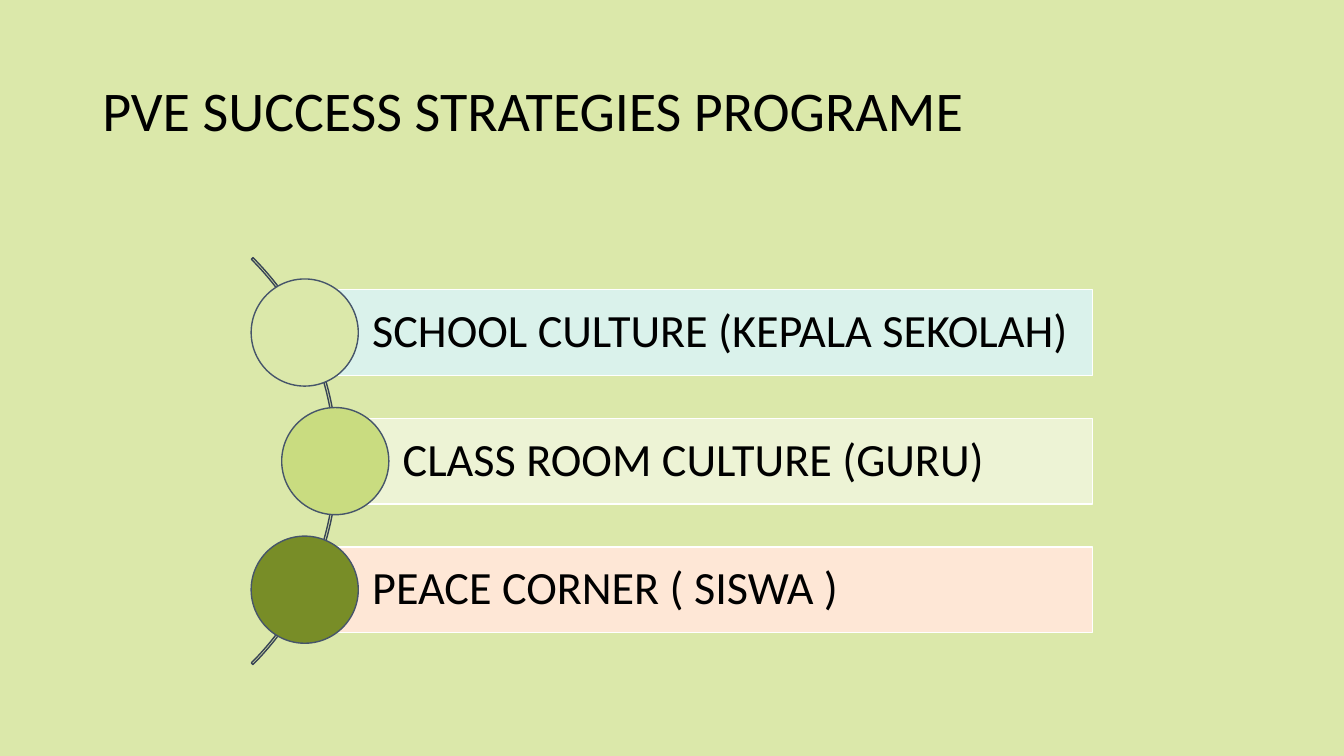
from pptx import Presentation
from pptx import util as u
from pptx.dml.color import RGBColor
from pptx.enum import shapes, text

BLACK = RGBColor(0x00, 0x00, 0x00)
WHITE = RGBColor(0xFF, 0xFF, 0xFF)
BACKGROUND = RGBColor(0xDB, 0xE8, 0xAA)
ARC_LINE = RGBColor(0x38, 0x44, 0x55)
CIRCLE_LINE = RGBColor(0x46, 0x55, 0x6A)

TITLE = "PVE SUCCESS STRATEGIES PROGRAME"
# wording, bar colour, circle colour, horizontal centre of the circle in cm
STRATEGIES = [
    ("SCHOOL CULTURE (KEPALA SEKOLAH)", RGBColor(0xDA, 0xF2, 0xEB), BACKGROUND, 7.68),
    ("CLASS ROOM CULTURE (GURU)", RGBColor(0xED, 0xF3, 0xD5), RGBColor(0xC9, 0xDC, 0x80), 8.45),
    ("PEACE CORNER ( SISWA )", RGBColor(0xFE, 0xE7, 0xD6), RGBColor(0x78, 0x8D, 0x27), 7.68),
]

# lengths in cm
MIDDLE_Y = 11.62
ROW_PITCH = 3.24
BAR_HEIGHT = 2.16
BAR_RIGHT = 27.54
CIRCLE_SIZE = 2.7
ARC_SIZE = 14.5
ARC_LEFT = -6


def add_shape(slide, kind, left, top, width, height, line, fill=None):
    shape = slide.shapes.add_shape(kind, u.Cm(left), u.Cm(top), u.Cm(width), u.Cm(height))
    shape.shadow.inherit = False
    if fill is None:
        shape.fill.background()
    else:
        shape.fill.solid()
        shape.fill.fore_color.rgb = fill
    shape.line.color.rgb = line
    shape.line.width = u.Pt(1)
    return shape


def write(shape, wording, size, inset=0.25, color=BLACK, font="Calibri"):
    frame = shape.text_frame
    frame.word_wrap = True
    frame.vertical_anchor = text.MSO_ANCHOR.MIDDLE
    frame.margin_left = u.Cm(inset)
    paragraph = frame.paragraphs[0]
    paragraph.alignment = text.PP_ALIGN.LEFT
    paragraph.line_spacing = 0.9
    run = paragraph.add_run()
    run.text = wording
    run.font.name = font
    run.font.size = u.Pt(size)
    run.font.color.rgb = color


def add_strategy(slide, row, wording, bar_color, circle_color, center_x):
    center_y = MIDDLE_Y + (row - (len(STRATEGIES) - 1) / 2) * ROW_PITCH
    bar = add_shape(slide, shapes.MSO_SHAPE.RECTANGLE, center_x, center_y - BAR_HEIGHT / 2,
                    BAR_RIGHT - center_x, BAR_HEIGHT, WHITE, bar_color)
    write(bar, wording, 33, inset=1.7)
    add_shape(slide, shapes.MSO_SHAPE.OVAL, center_x - CIRCLE_SIZE / 2, center_y - CIRCLE_SIZE / 2,
              CIRCLE_SIZE, CIRCLE_SIZE, CIRCLE_LINE, circle_color)


def main():
    presentation = Presentation()
    presentation.slide_width = u.Cm(33.87)
    presentation.slide_height = u.Cm(19.05)
    slide = presentation.slides.add_slide(presentation.slide_layouts[6])
    slide.background.fill.solid()
    slide.background.fill.fore_color.rgb = BACKGROUND

    arc = add_shape(slide, shapes.MSO_SHAPE.BLOCK_ARC, ARC_LEFT, MIDDLE_Y - ARC_SIZE / 2,
                    ARC_SIZE, ARC_SIZE, ARC_LINE)
    # start and end angle (315° and 45°), then thickness
    for index, value in enumerate((189, 27, 0.004)):
        arc.adjustments[index] = value

    for row, strategy in enumerate(STRATEGIES):
        add_strategy(slide, row, *strategy)

    title = slide.shapes.add_textbox(u.Cm(2.33), u.Cm(1.01), u.Cm(29.21), u.Cm(3.68))
    write(title, TITLE, 40)
    presentation.save("out.pptx")


if __name__ == "__main__":
    main()
